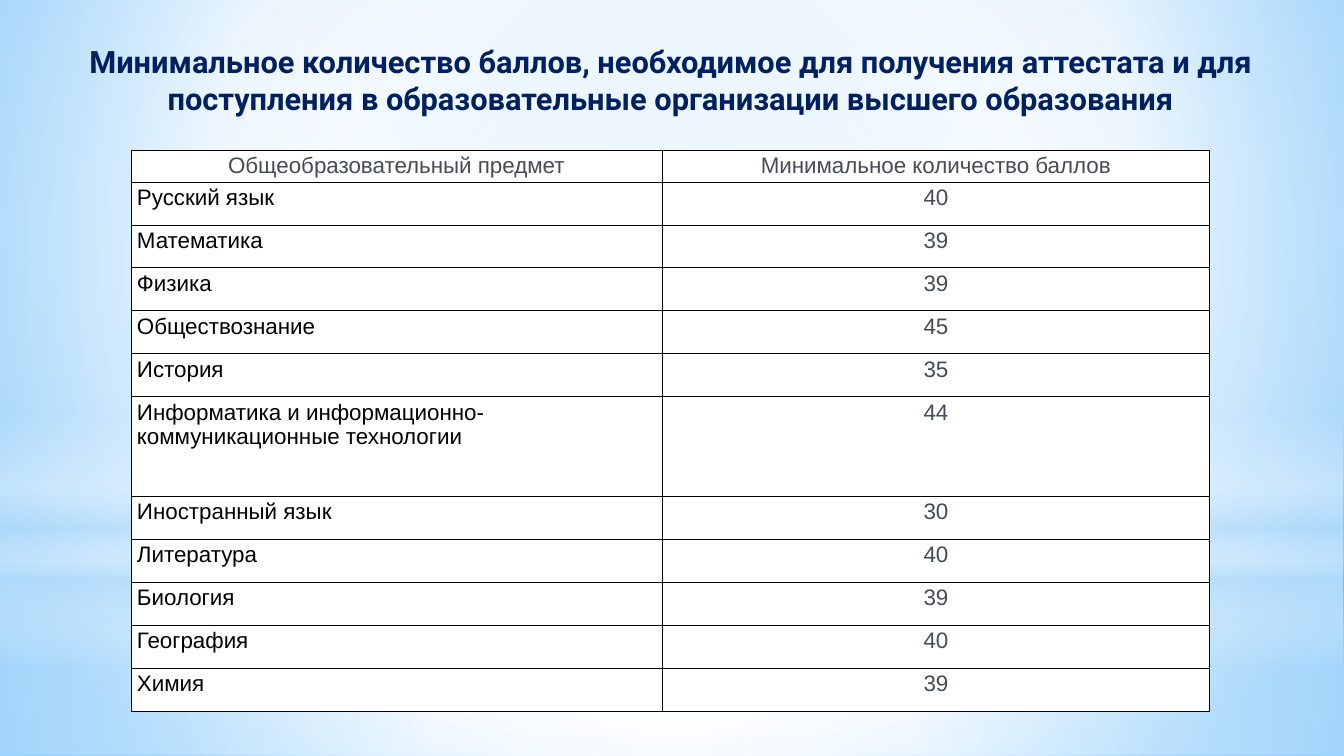
"""Build a slide with a table of minimum exam scores by school subject."""
from dataclasses import dataclass

from lxml import etree
from pptx import Presentation
from pptx import util as u
from pptx.dml.color import RGBColor
from pptx.enum import shapes, text
from pptx.oxml.ns import nsdecls, qn

TITLE = ("Минимальное количество баллов, необходимое для получения аттестата и для "
         "поступления в образовательные организации высшего образования")
HEADER = ("Общеобразовательный предмет", "Минимальное количество баллов")
SCORES = [
    ("Русский язык", 40),
    ("Математика", 39),
    ("Физика", 39),
    ("Обществознание", 45),
    ("История", 35),
    ("Информатика и информационно-коммуникационные технологии", 44),
    ("Иностранный язык", 30),
    ("Литература", 40),
    ("Биология", 39),
    ("География", 40),
    ("Химия", 39),
]


@dataclass(frozen=True)
class Theme:
    title_font: str = "Roboto"
    table_font: str = "Arial"
    title_size: int = 22
    table_size: int = 16
    border_width: float = 0.75
    navy: str = "002060"
    gray: str = "464C55"
    black: str = "000000"
    white: str = "FFFFFF"
    haze: str = "B4DCFA"
    sky: str = "9ED5FF"
    deep_sky: str = "5BB9FF"


THEME = Theme()
SLIDE_SIZE = (1344, 756)
TITLE_BOX = (27, 38, 1287, 90)
TABLE_ORIGIN = (131, 150)
COLUMN_WIDTHS = (531, 548)
HEADER_HEIGHT, ROW_HEIGHT, TALL_ROW_HEIGHT = 32, 43, 100
LONG_SUBJECT = 30
CELL_MARGINS = (6, 3)
SCALE = u.Inches(1) / 100.8

CENTER = (50, 50, 50, 50)
BACKDROP_FOCUS = (20, 10, 20, 60)
BACKDROP = [(0, THEME.sky, 100), (60, THEME.white, 100), (100, THEME.deep_sky, 100)]
RECTANGLE, OVAL = shapes.MSO_SHAPE.RECTANGLE, shapes.MSO_SHAPE.OVAL
GLOWS = [
    (RECTANGLE, (0, 562, 1344, 194), CENTER,
     [(0, THEME.white, 91), (37, THEME.white, 76), (100, THEME.haze, 79)]),
    (RECTANGLE, (0, 0, 1344, 562), CENTER,
     [(0, THEME.white, 89), (48, THEME.white, 62), (100, THEME.haze, 79)]),
    (RECTANGLE, (0, 415, 1344, 252), None,
     [(0, THEME.white, 0), (29, THEME.white, 30), (45, THEME.haze, 40),
      (55, THEME.white, 26), (65, THEME.haze, 60), (100, THEME.white, 0)]),
    (OVAL, (0, 176, 1344, 562), CENTER,
     [(0, THEME.white, 100), (56, THEME.white, 0)]),
]


def px(length):
    return u.Emu(round(length * SCALE))


def set_gradient(fill, element, stops, focus):
    fill.solid()
    solid = element.find(".//" + qn("a:solidFill"))
    stop_xml = "".join(
        f'<a:gs pos="{position * 1000}"><a:srgbClr val="{color}">'
        f'<a:alpha val="{opacity * 1000}"/></a:srgbClr></a:gs>'
        for position, color, opacity in stops)
    if focus:
        left, top, right, bottom = (side * 1000 for side in focus)
        direction = (f'<a:path path="circle"><a:fillToRect l="{left}" t="{top}" '
                     f'r="{right}" b="{bottom}"/></a:path>')
    else:
        direction = '<a:lin ang="5400000" scaled="0"/>'
    gradient = etree.fromstring(
        f'<a:gradFill {nsdecls("a")} rotWithShape="1">'
        f'<a:gsLst>{stop_xml}</a:gsLst>{direction}</a:gradFill>')
    solid.getparent().replace(solid, gradient)


def write_text(frame, content, *, font, size, color, bold=False, centered=True):
    frame.word_wrap = True
    paragraph = frame.paragraphs[0]
    paragraph.alignment = text.PP_ALIGN.CENTER if centered else text.PP_ALIGN.LEFT
    run = paragraph.add_run()
    run.text = content
    run.font.name = font
    run.font.size = u.Pt(size)
    run.font.bold = bold
    run.font.color.rgb = RGBColor.from_string(color)


def add_glows(slide):
    for kind, box, focus, stops in GLOWS:
        shape = slide.shapes.add_shape(kind, *map(px, box))
        shape.shadow.inherit = False
        shape.line.fill.background()
        set_gradient(shape.fill, shape.element, stops, focus)


def place_title(slide):
    title = slide.shapes.title
    title.left, title.top, title.width, title.height = map(px, TITLE_BOX)
    title.text_frame.vertical_anchor = text.MSO_ANCHOR.TOP
    title.text_frame.auto_size = text.MSO_AUTO_SIZE.NONE
    write_text(title.text_frame, TITLE, font=THEME.title_font,
               size=THEME.title_size, color=THEME.navy, bold=True)
    slide.shapes.element.append(title.element)


def set_borders(cell):
    properties = cell._tc.get_or_add_tcPr()
    for index, side in enumerate(("lnL", "lnR", "lnT", "lnB")):
        properties.insert(index, etree.fromstring(
            f'<a:{side} {nsdecls("a")} w="{u.Pt(THEME.border_width)}"><a:solidFill>'
            f'<a:srgbClr val="{THEME.black}"/></a:solidFill></a:{side}>'))


def add_scores(slide):
    rows = [HEADER] + SCORES
    heights = [HEADER_HEIGHT] + [
        TALL_ROW_HEIGHT if len(subject) > LONG_SUBJECT else ROW_HEIGHT
        for subject, _ in SCORES]
    box = (*TABLE_ORIGIN, sum(COLUMN_WIDTHS), sum(heights))
    table = slide.shapes.add_table(len(rows), len(HEADER), *map(px, box)).table
    table.first_row = table.horz_banding = False
    for column, width in zip(table.columns, COLUMN_WIDTHS):
        column.width = px(width)
    for row, height in zip(table.rows, heights):
        row.height = px(height)
    for row_index, values in enumerate(rows):
        for column_index, value in enumerate(values):
            cell = table.cell(row_index, column_index)
            is_subject = row_index > 0 and column_index == 0
            cell.margin_left = cell.margin_right = px(CELL_MARGINS[0])
            cell.margin_top = cell.margin_bottom = px(CELL_MARGINS[1])
            cell.fill.solid()
            cell.fill.fore_color.rgb = RGBColor.from_string(THEME.white)
            set_borders(cell)
            write_text(cell.text_frame, str(value), font=THEME.table_font,
                       size=THEME.table_size, centered=not is_subject,
                       color=THEME.black if is_subject else THEME.gray)


def main():
    presentation = Presentation()
    presentation.slide_width, presentation.slide_height = map(px, SLIDE_SIZE)
    slide = presentation.slides.add_slide(presentation.slide_layouts[5])
    set_gradient(slide.background.fill, slide.element, BACKDROP, BACKDROP_FOCUS)
    add_glows(slide)
    place_title(slide)
    add_scores(slide)
    presentation.save("out.pptx")


if __name__ == "__main__":
    main()
